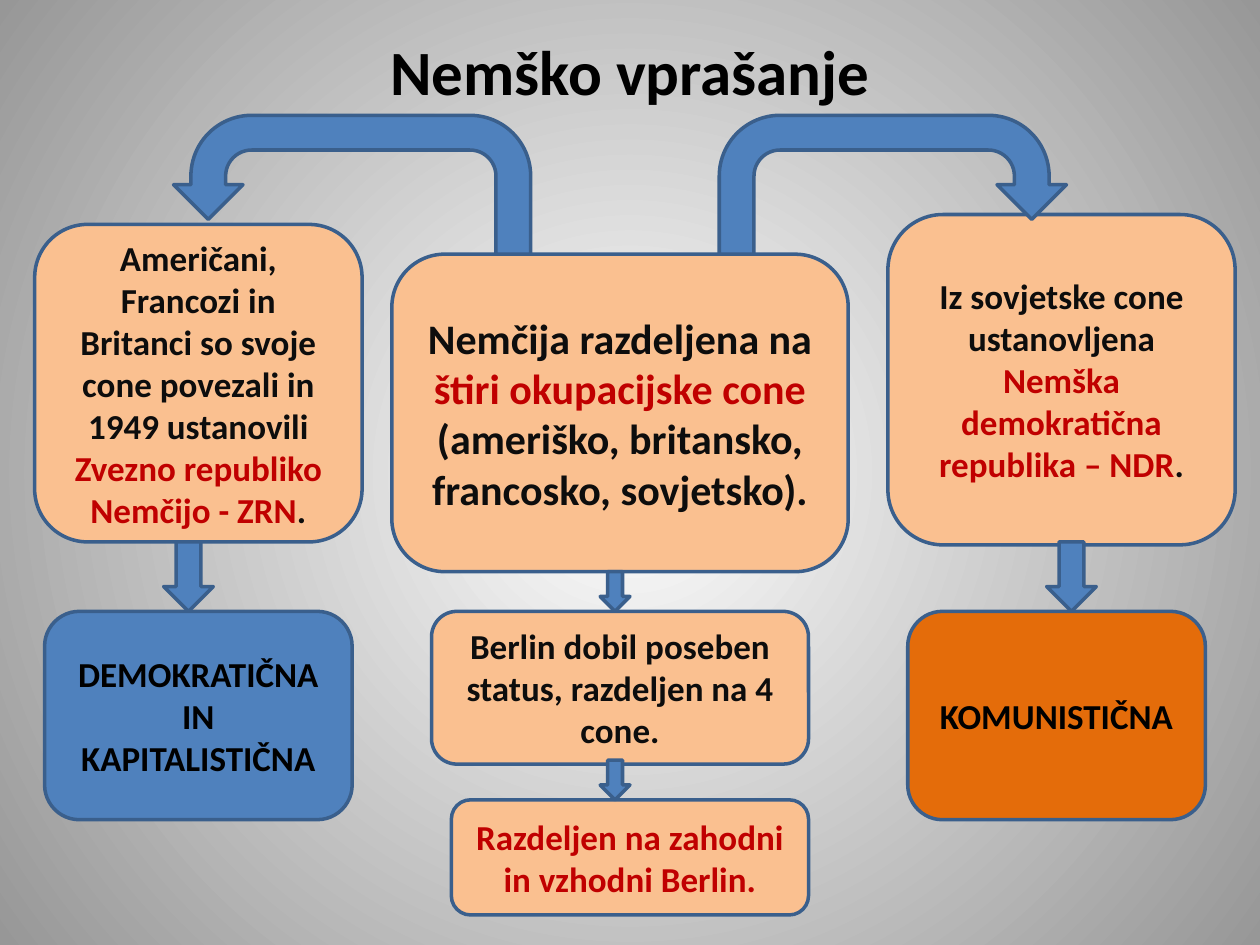
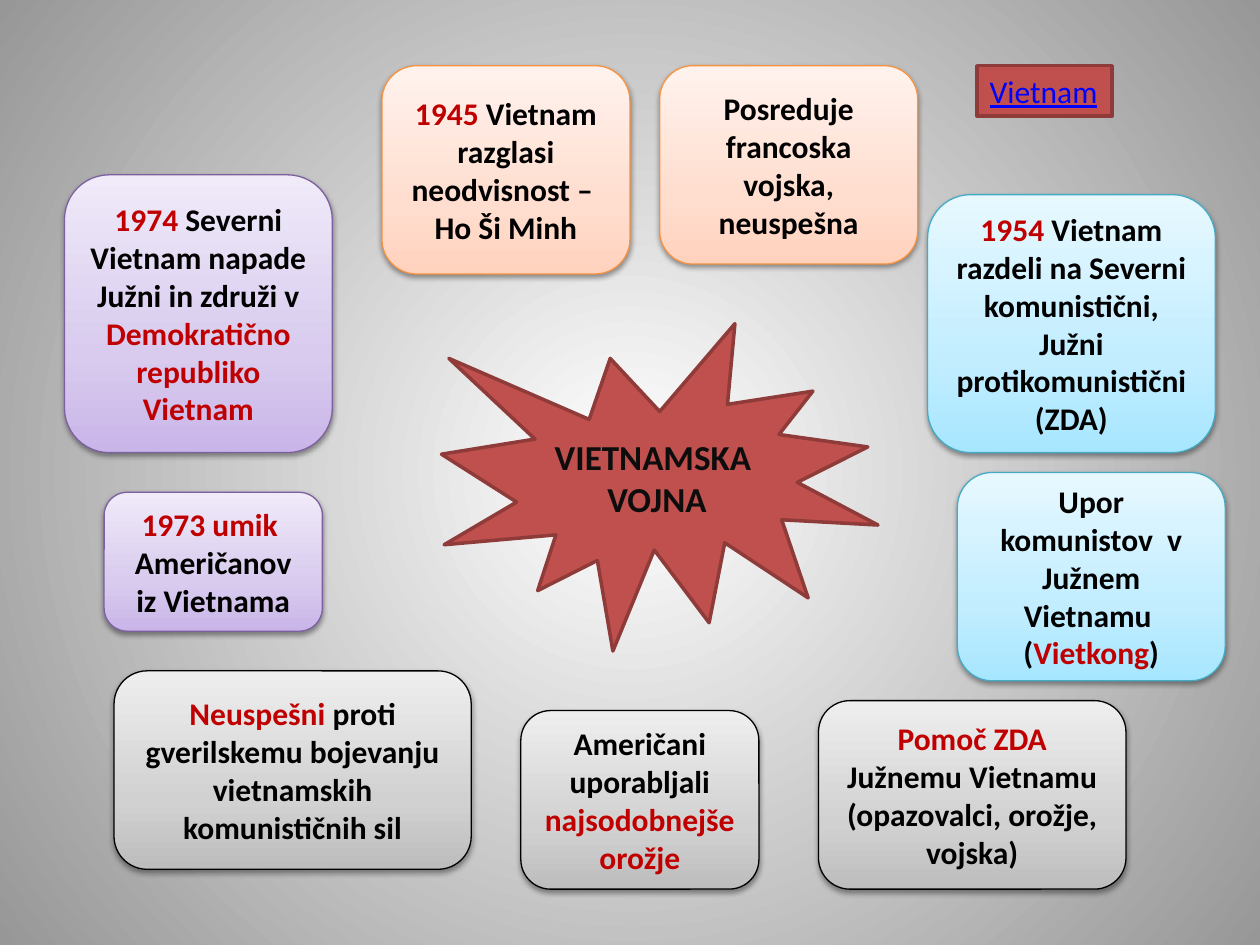
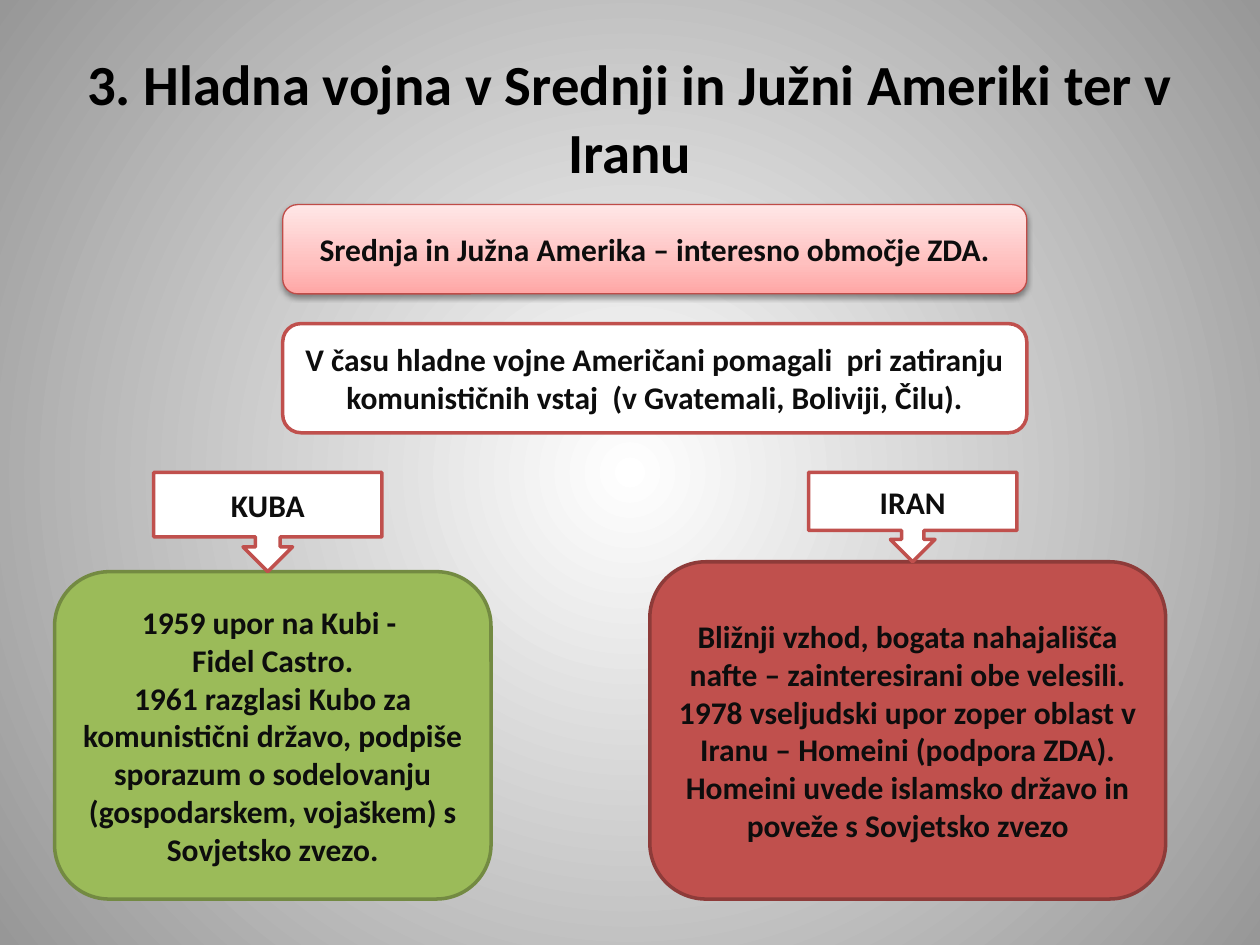
from copy import deepcopy

from pptx import Presentation
from pptx.dml.color import RGBColor
from pptx.enum.shapes import MSO_SHAPE
from pptx.enum.text import MSO_ANCHOR, MSO_AUTO_SIZE, PP_ALIGN
from pptx.oxml import parse_xml
from pptx.oxml.ns import nsdecls, qn
from pptx.util import Inches, Mm, Pt

FONT = "Calibri"
CELL = 2  # millimetres per grid cell
COLUMNS, ROWS = 126, 94
TITLE_LEFT, TITLE_WIDTH = 5.85, 114.3

COLOURS = {
    "black": "000000", "ink": "0D0D0D", "accent": "C00000", "link": "0000FF",
    "white": "FFFFFF", "edge": "979797",
    "apricot": "FAC090", "blue": "4F81BD", "navy": "3A5F8C", "orange": "E46C0A",
    "red": "C0504D", "maroon": "8E3B39", "green": "9BBB59", "olive": "738A42",
    "peach bottom": "FFD2BD", "peach middle": "FFDED0",
    "peach top": "FFF2ED", "peach line": "F69240",
    "sky bottom": "A7E6FF", "sky middle": "C1EDFF",
    "sky top": "E7F8FF", "sky line": "46AAC5",
    "grey bottom": "BDBDBD", "grey middle": "D1D1D1",
    "grey top": "EEEEEE", "grey line": "000000",
    "violet bottom": "C9B5E8", "violet middle": "D8CBEE",
    "violet top": "F0EAF9", "violet line": "7D60A0",
    "rose bottom": "FFA6A5", "rose middle": "FFC0BF",
    "rose top": "FFE7E7", "rose line": "BF4C48",
}


def colour(name):
    return RGBColor.from_string(COLOURS[name])


def paint_gradient(fill, element, stops):
    """Fill with (position, colour name) stops; element holds the fill's XML."""
    fill.gradient()
    stop_list = element.find(".//" + qn("a:gsLst"))
    while len(stop_list) < len(stops):
        stop_list.insert(1, deepcopy(stop_list[0]))
    for stop, (position, name) in zip(fill.gradient_stops, stops):
        stop.position = position
        stop.color.rgb = colour(name)


class Deck:
    """Holds the presentation, the current slide and the shapes being added to.

    Places are (column, row, columns, rows) on a grid centred on the slide.
    """

    def __init__(self):
        self.show = Presentation()
        self.show.slide_width, self.show.slide_height = Inches(10), Inches(7.5)
        self.left = (self.show.slide_width - Mm(COLUMNS * CELL)) / 2
        self.top = (self.show.slide_height - Mm(ROWS * CELL)) / 2
        self.paint_background()

    def paint_background(self):
        master = self.show.slide_master
        paint_gradient(master.background.fill, master.element,
                       [(0, "white"), (1, "edge")])
        linear = master.element.find(".//" + qn("a:lin"))
        linear.getparent().replace(linear, parse_xml(
            f'<a:path {nsdecls("a")} path="circle">'
            '<a:fillToRect l="50000" t="50000" r="50000" b="50000"/></a:path>'))

    def place(self, column, row, columns, rows):
        return (int(self.left + Mm(column * CELL)), int(self.top + Mm(row * CELL)),
                Mm(columns * CELL), Mm(rows * CELL))

    def new_page(self, title=None, row=0, rows=0, size=36):
        layout = self.show.slide_layouts[5 if title else 6]
        self.page = self.show.slides.add_slide(layout)
        self.shapes = self.page.shapes
        if title:
            box = self.page.shapes.title
            box.left, box.top, box.width, box.height = self.place(
                TITLE_LEFT, row, TITLE_WIDTH, rows)
            self.set_text(box, title, size, "black")
            box.text_frame.auto_size = MSO_AUTO_SIZE.NONE

    def new_group(self):
        self.shapes = self.page.shapes.add_group_shape().shapes

    def set_text(self, box, text, size, ink):
        """Set one paragraph per line; words between asterisks get the accent."""
        frame = box.text_frame
        frame.word_wrap = True
        frame.vertical_anchor = MSO_ANCHOR.MIDDLE
        frame.text = text
        for paragraph, line in zip(frame.paragraphs, text.split("\n")):
            paragraph.alignment = PP_ALIGN.CENTER
            paragraph.text = ""
            for index, words in enumerate(line.split("*")):
                if words:
                    span = paragraph.add_run()
                    span.text = words
                    span.font.name, span.font.size = FONT, Pt(size)
                    span.font.bold = True
                    span.font.color.rgb = colour("accent" if index % 2 else ink)

    def shape(self, kind, place, fill, line, text="", size=18, ink="ink", width=2):
        shape = self.shapes.add_shape(kind, *self.place(*place))
        shape.shadow.inherit = False
        shape.fill.solid()
        shape.fill.fore_color.rgb = colour(fill)
        shape.line.color.rgb = colour(line)
        shape.line.width = Pt(width)
        if text:
            self.set_text(shape, text, size, ink)
        return shape

    def card(self, place, fill, line, text, size=18, ink="ink", width=2):
        return self.shape(MSO_SHAPE.ROUNDED_RECTANGLE, place, fill, line,
                          text, size, ink, width)

    def soft_card(self, place, tint, text, ink="black"):
        """Add a card with a vertical tint gradient and a soft shadow."""
        card = self.card(place, f"{tint} middle", f"{tint} line", text,
                         ink=ink, width=0.75)
        properties = card.element.spPr
        paint_gradient(card.fill, properties, [
            (0, f"{tint} bottom"), (0.35, f"{tint} middle"), (1, f"{tint} top")])
        card.fill.gradient_angle = 90
        properties.find(qn("a:effectLst")).append(parse_xml(
            f'<a:outerShdw {nsdecls("a")} blurRad="40000" dist="20000" '
            'dir="5400000" rotWithShape="0"><a:srgbClr val="000000">'
            '<a:alpha val="38000"/></a:srgbClr></a:outerShdw>'))

    def arrow(self, place, kind=MSO_SHAPE.DOWN_ARROW, flipped=False):
        arrow = self.shape(kind, place, "blue", "navy")
        if flipped:
            arrow.element.spPr.xfrm.set("flipH", "1")

    def label(self, place, text):
        """Add a one-line underlined tag."""
        tag = self.shape(MSO_SHAPE.RECTANGLE, place, "red", "maroon", text, ink="link")
        frame = tag.text_frame
        frame.word_wrap = False
        frame.auto_size = MSO_AUTO_SIZE.SHAPE_TO_FIT_TEXT
        frame.vertical_anchor = MSO_ANCHOR.TOP
        frame.paragraphs[0].alignment = PP_ALIGN.LEFT
        font = frame.paragraphs[0].runs[0].font
        font.bold, font.underline = False, True


def german_question(deck):
    deck.new_page("Nemško vprašanje", row=2, rows=9)

    deck.new_group()
    for place, text, size in [
        ((39, 25, 46, 32), "Nemčija razdeljena na *štiri okupacijske cone *"
         "(ameriško, britansko, francosko, sovjetsko).", 24),
        ((43, 61, 38, 15.4), "Berlin dobil poseben status, razdeljen na 4 cone.", 20),
        ((45, 80, 36, 11.6), "*Razdeljen na zahodni in vzhodni Berlin.*", 20),
    ]:
        deck.card(place, "apricot", "navy", text, size)
    for row in (57, 76):
        deck.arrow((60, row, 3, 4))

    sides = [
        ((3, 22, 33, 32), "Američani, Francozi in Britanci so svoje cone povezali "
         "in 1949 ustanovili *Zvezno republiko Nemčijo - ZRN*.",
         (17, 11, 36, 14), True,
         (4, 61, 31, 21), "blue", "DEMOKRATIČNA IN KAPITALISTIČNA", 16),
        ((89, 21, 35, 33.3), "Iz sovjetske cone ustanovljena "
         "*Nemška demokratična republika – NDR*.",
         (72, 11, 35, 14), False,
         (91, 61, 30, 21), "orange", "KOMUNISTIČNA", 105),
    ]
    for state, story, turn, flipped, regime, fill, name, arrow_column in sides:
        deck.new_group()
        deck.card(state, "apricot", "navy", story, 20)
        deck.arrow(turn, MSO_SHAPE.U_TURN_ARROW, flipped)
        deck.card(regime, fill, "navy", name, 20, "black")
        deck.arrow((arrow_column, 54, 5, 7))


def vietnam_war(deck):
    deck.new_page()
    for place, tint, text in [
        ((38, 6, 25, 21), "peach",
         "*1945* Vietnam razglasi neodvisnost – \nHo Ši Minh"),
        ((66, 6, 26, 20), "peach", "Posreduje francoska vojska, neuspešna"),
        ((93, 19, 29, 26), "sky", "*1954 *Vietnam razdeli na Severni komunistični, "
         "Južni protikomunistični (ZDA)"),
        ((96, 47, 27, 21), "sky",
         "Upor komunistov  v Južnem Vietnamu  (*Vietkong*)"),
        ((82, 70, 31, 19), "grey",
         "*Pomoč ZDA *Južnemu Vietnamu (opazovalci, orožje, vojska)"),
        ((52, 71, 24, 18), "grey", "Američani uporabljali *najsodobnejše orožje*"),
        ((11, 67, 36, 20), "grey", "*Neuspešni *proti gverilskemu bojevanju "
         "vietnamskih komunističnih sil"),
        ((10, 49, 22, 14), "violet", "*1973 umik  *Američanov iz Vietnama"),
        ((6, 17, 27, 28), "violet", "*1974* Severni Vietnam napade Južni in združi v "
         "*Demokratično republiko Vietnam*"),
    ]:
        deck.soft_card(place, tint, text)
    deck.shape(MSO_SHAPE.EXPLOSION1, (44, 32, 44, 33), "red", "maroon",
               "VIETNAMSKA \nVOJNA", 20)
    deck.label((98, 6, 13.6, 5.1), "Vietnam")


def america_and_iran(deck):
    deck.new_page("3. Hladna vojna v Srednji in Južni Ameriki ter v Iranu",
                  row=3.2, rows=15.9, size=32.4)
    deck.soft_card((28, 20, 75, 9), "rose",
                   "Srednja in Južna Amerika – interesno območje ZDA.", "ink")
    deck.card((28, 32, 75, 11), "white", "red",
              "V času hladne vojne Američani pomagali  pri zatiranju "
              "komunističnih vstaj  (v Gvatemali, Boliviji, Čilu).")
    for place, fill, line, story, callout, country in [
        ((5, 57, 44, 33), "green", "olive",
         "1959 upor na Kubi - \nFidel Castro.\n"
         "1961 razglasi Kubo za komunistični državo, podpiše sporazum o sodelovanju "
         "(gospodarskem, vojaškem) s Sovjetsko zvezo.",
         (15, 47, 23, 10), "KUBA"),
        ((65, 56, 52, 34), "red", "maroon",
         "Bližnji vzhod, bogata nahajališča nafte – zainteresirani obe velesili.\n"
         "1978 vseljudski upor zoper oblast v Iranu – Homeini (podpora ZDA).\n"
         "Homeini uvede islamsko državo in poveže s Sovjetsko zvezo",
         (81, 47, 21, 9), "IRAN"),
    ]:
        deck.new_group()
        deck.card(place, fill, line, story)
        deck.shape(MSO_SHAPE.DOWN_ARROW_CALLOUT, callout, "white", "red", country)


def main():
    deck = Deck()
    german_question(deck)
    vietnam_war(deck)
    america_and_iran(deck)
    deck.show.save("out.pptx")


if __name__ == "__main__":
    main()
